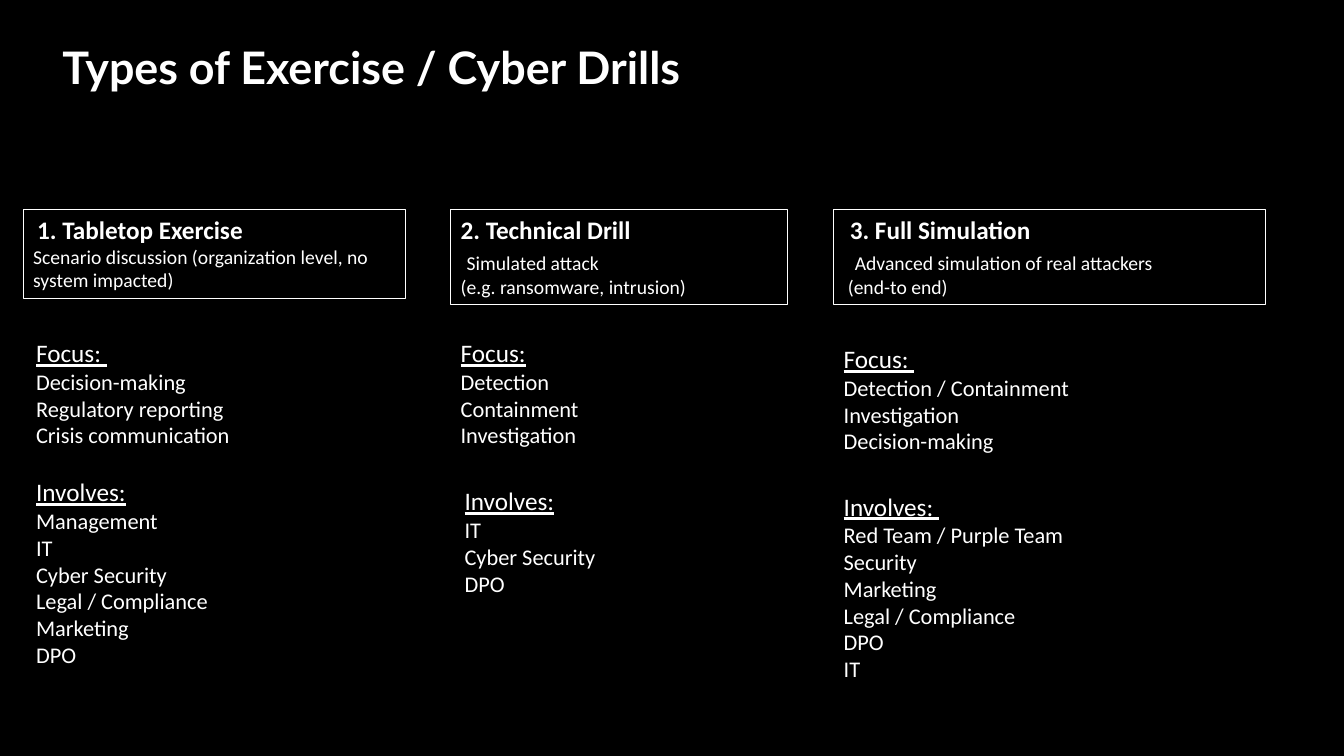
from pptx import Presentation
from pptx.dml.color import RGBColor
from pptx.enum.shapes import MSO_SHAPE
from pptx.enum.text import MSO_ANCHOR, MSO_AUTO_SIZE, PP_ALIGN
from pptx.util import Inches, Pt

COLORS = {"back": "000000", "text": "FFFFFF", "line": "FFFFFF"}

DRILLS = [
    {
        "box": (0.23, 2.08, 3.79, 0.88),
        "head": ("1. Tabletop Exercise", 0.04),
        "about": [("Scenario discussion (organization level, no system impacted)", 0)],
        "lists": [
            ((0.26, 3.3, 2.47, 1.21), "Focus: ",
             ["Decision-making", "Regulatory reporting", "Crisis communication"]),
            ((0.26, 4.68, 2.47, 2.02), "Involves:",
             ["Management", "IT", "Cyber Security", "Legal / Compliance",
              "Marketing", "DPO"]),
        ],
    },
    {
        "box": (4.47, 2.08, 3.34, 0.94),
        "head": ("2. Technical Drill", 0),
        "about": [("Simulated attack", 0.06), ("(e.g. ransomware, intrusion)", 0)],
        "lists": [
            ((4.47, 3.3, 2.02, 1.21), "Focus:",
             ["Detection", "Containment", "Investigation"]),
            ((4.51, 4.77, 2.47, 1.21), "Involves:",
             ["IT", "Cyber Security", "DPO"]),
        ],
    },
    {
        "box": (8.27, 2.08, 4.28, 0.94),
        "head": ("3. Full Simulation", 0.06),
        "about": [("Advanced simulation of real attackers", 0.11),
                  ("(end-to end)", 0.04)],
        "lists": [
            ((8.27, 3.36, 3.07, 1.45), "Focus: ",
             ["Detection / Containment", "Investigation", "Decision-making"]),
            ((8.27, 4.82, 3.2, 2.02), "Involves: ",
             ["Red Team / Purple Team", "Security", "Marketing",
              "Legal / Compliance", "DPO", "IT"]),
        ],
    },
]


def color(name):
    return RGBColor.from_string(COLORS[name])


def set_frame(shape, wrap=True):
    frame = shape.text_frame
    frame.word_wrap = wrap
    frame.auto_size = MSO_AUTO_SIZE.SHAPE_TO_FIT_TEXT
    return frame


def add_line(frame, text, size, first=False, indent=0, bold=False,
             under=False, face="Calibri"):
    para = frame.paragraphs[0] if first else frame.add_paragraph()
    para.alignment = PP_ALIGN.LEFT
    if indent:
        para._p.get_or_add_pPr().set("indent", str(Inches(indent)))
    run = para.add_run()
    run.text = text
    font = run.font
    font.name = face
    font.size = Pt(size)
    font.bold = bold
    font.underline = under
    font.color.rgb = color("text")
    return para


def add_text(slide, place, wrap=True):
    box = slide.shapes.add_textbox(*map(Inches, place))
    return set_frame(box, wrap)


def add_title(slide, text):
    frame = add_text(slide, (0.46, 0.34, 8.34, 0.64), wrap=False)
    add_line(frame, text, 32, first=True, indent=0.06, bold=True, face="Lato")


def add_box(slide, place, head, about):
    box = slide.shapes.add_shape(MSO_SHAPE.RECTANGLE, *map(Inches, place))
    box.shadow.inherit = False
    box.fill.background()
    box.line.color.rgb = color("line")
    box.line.width = Pt(0.75)
    frame = set_frame(box)
    frame.vertical_anchor = MSO_ANCHOR.TOP
    title, shift = head
    add_line(frame, title, 18, first=True, indent=shift, bold=True)
    for index, (text, shift) in enumerate(about):
        para = add_line(frame, text, 14, indent=shift)
        if len(about) > 1 and index == 0:
            para.space_before = Pt(4)
            para.space_after = Pt(1)


def add_list(slide, place, head, items):
    frame = add_text(slide, place)
    add_line(frame, head, 18, first=True, under=True)
    for item in items:
        add_line(frame, item, 16)


def main():
    deck = Presentation()
    deck.slide_width = Inches(13.33)
    deck.slide_height = Inches(7.5)
    slide = deck.slides.add_slide(deck.slide_layouts[6])
    fill = slide.background.fill
    fill.solid()
    fill.fore_color.rgb = color("back")
    add_title(slide, "Types of Exercise / Cyber Drills")
    for drill in DRILLS:
        add_box(slide, drill["box"], drill["head"], drill["about"])
        for place, head, items in drill["lists"]:
            add_list(slide, place, head, items)
    deck.save("out.pptx")


if __name__ == "__main__":
    main()
